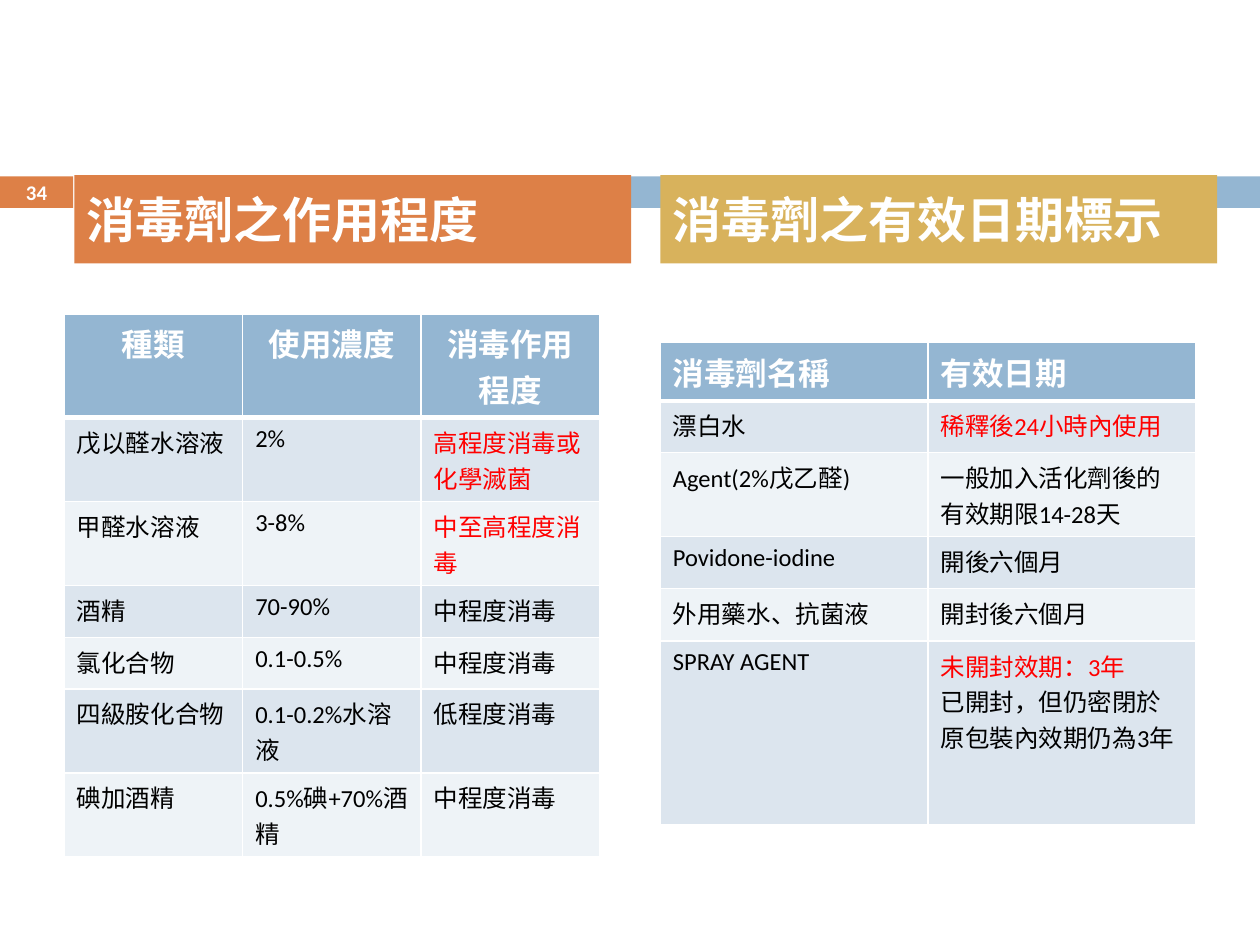
from lxml.etree import SubElement
from pptx import Presentation
from pptx.dml.color import RGBColor
from pptx.enum.shapes import MSO_SHAPE as Shape
from pptx.enum.text import MSO_ANCHOR as Anchor, PP_ALIGN as Align
from pptx.oxml.ns import qn
from pptx.util import Inches, Pt

LATIN, CJK = "Calibri", "Noto Sans CJK TC"
BLUE, ORANGE, GOLD = "94B6D2", "DD8047", "D8B25C"
WHITE, BLACK, RED = "FFFFFF", "000000", "FF0000"
BANDS = ["DCE5EE", "EEF3F7"]

LEVELS = [
    ["種類", "使用濃度", "消毒作用程度"],
    ["戊以醛水溶液", "2%", "高程度消毒或化學滅菌"],
    ["甲醛水溶液", "3-8%", "中至高程度消毒"],
    ["酒精", "70-90%", "中程度消毒"],
    ["氯化合物", "0.1-0.5%", "中程度消毒"],
    ["四級胺化合物", "0.1-0.2%水溶液", "低程度消毒"],
    ["碘加酒精", "0.5%碘+70%酒精", "中程度消毒"],
]
EXPIRY = [
    ["消毒劑名稱", "有效日期"],
    ["漂白水", "稀釋後24小時內使用"],
    ["Agent(2%戊乙醛)", "一般加入活化劑後的有效期限14-28天"],
    ["Povidone-iodine", "開後六個月"],
    ["外用藥水、抗菌液", "開封後六個月"],
    ["SPRAY AGENT", "未開封效期：3年\n已開封，但仍密閉於原包裝內效期仍為3年"],
]
RED_LINES = {"高程度消毒或化學滅菌", "中至高程度消毒", "稀釋後24小時內使用", "未開封效期：3年"}


def color(value):
    return RGBColor.from_string(value)


def add_run(paragraph, text, size, text_color, bold):
    run = paragraph.add_run()
    run.text = text
    formats = {"name": LATIN, "size": Pt(size), "bold": bold}
    for name, value in formats.items():
        setattr(run.font, name, value)
    run.font.color.rgb = color(text_color)
    SubElement(run.font._element, qn("a:ea"), typeface=CJK)


def add_bar(slide, box, fill):
    bar = slide.shapes.add_shape(Shape.RECTANGLE, *map(Inches, box))
    bar.shadow.inherit = False
    bar.fill.solid()
    bar.fill.fore_color.rgb = color(fill)
    bar.line.fill.background()
    return bar


def add_heading(slide, box, text, fill):
    frame = add_bar(slide, box, fill).text_frame
    frame.vertical_anchor = Anchor.MIDDLE
    paragraph = frame.paragraphs[0]
    paragraph.alignment = Align.LEFT
    paragraph.space_before = Pt(7)
    add_run(paragraph, text, 28, WHITE, True)


def add_page_number(slide, box, text):
    frame = slide.shapes.add_textbox(*map(Inches, box)).text_frame
    formats = {"word_wrap": True, "vertical_anchor": Anchor.MIDDLE,
               "margin_top": 0, "margin_bottom": 0}
    for name, value in formats.items():
        setattr(frame, name, value)
    frame.paragraphs[0].alignment = Align.CENTER
    add_run(frame.paragraphs[0], text, 11.9, WHITE, True)


def set_borders(cell, row_index):
    widths = {"L": 1, "R": 1, "T": 3 if row_index == 1 else 1,
              "B": 3 if row_index == 0 else 1}
    properties = cell._tc.get_or_add_tcPr()
    for side, width in widths.items():
        line = SubElement(properties, qn(f"a:ln{side}"), w=str(Pt(width)))
        fill = SubElement(line, qn("a:solidFill"))
        SubElement(fill, qn("a:srgbClr"), val=WHITE)


def fill_cell(cell, text, row_index, header_align):
    header = row_index == 0
    set_borders(cell, row_index)
    cell.fill.solid()
    cell.fill.fore_color.rgb = color(BLUE if header else BANDS[(row_index - 1) % 2])
    frame = cell.text_frame
    for index, line in enumerate(text.split("\n")):
        paragraph = frame.add_paragraph() if index else frame.paragraphs[0]
        paragraph.alignment = header_align if header else Align.LEFT
        body_color = RED if line in RED_LINES else BLACK
        add_run(paragraph, line, 18 if header else 14, WHITE if header else body_color, header)


def add_grid(slide, box, rows, heights, header_align):
    table = slide.shapes.add_table(len(rows), len(rows[0]), *map(Inches, box)).table
    for column in table.columns:
        column.width = Inches(box[2] / len(rows[0]))
    for row_index, (texts, height) in enumerate(zip(rows, heights)):
        table.rows[row_index].height = Inches(height)
        for column_index, text in enumerate(texts):
            fill_cell(table.cell(row_index, column_index), text, row_index, header_align)


def main():
    presentation = Presentation()
    presentation.slide_width, presentation.slide_height = Inches(10), Inches(7.5)
    slide = presentation.slides.add_slide(presentation.slide_layouts[6])
    add_bar(slide, (0, 1.4, 0.58, 0.25), ORANGE)
    add_bar(slide, (0.65, 1.4, 9.35, 0.25), BLUE)
    add_grid(slide, (0.51, 2.49, 4.25, 2.87), LEVELS, [0.41] * len(LEVELS), Align.CENTER)
    add_grid(slide, (5.24, 2.72, 4.25, 3.68), EXPIRY,
             [0.41, 0.41, 0.57, 0.41, 0.42, 1.46], Align.LEFT)
    add_heading(slide, (0.59, 1.39, 4.42, 0.7), "消毒劑之作用程度", ORANGE)
    add_heading(slide, (5.24, 1.39, 4.42, 0.7), "消毒劑之有效日期標示", GOLD)
    add_page_number(slide, (0, 1.39, 0.58, 0.27), "34")
    presentation.save("out.pptx")


if __name__ == "__main__":
    main()
